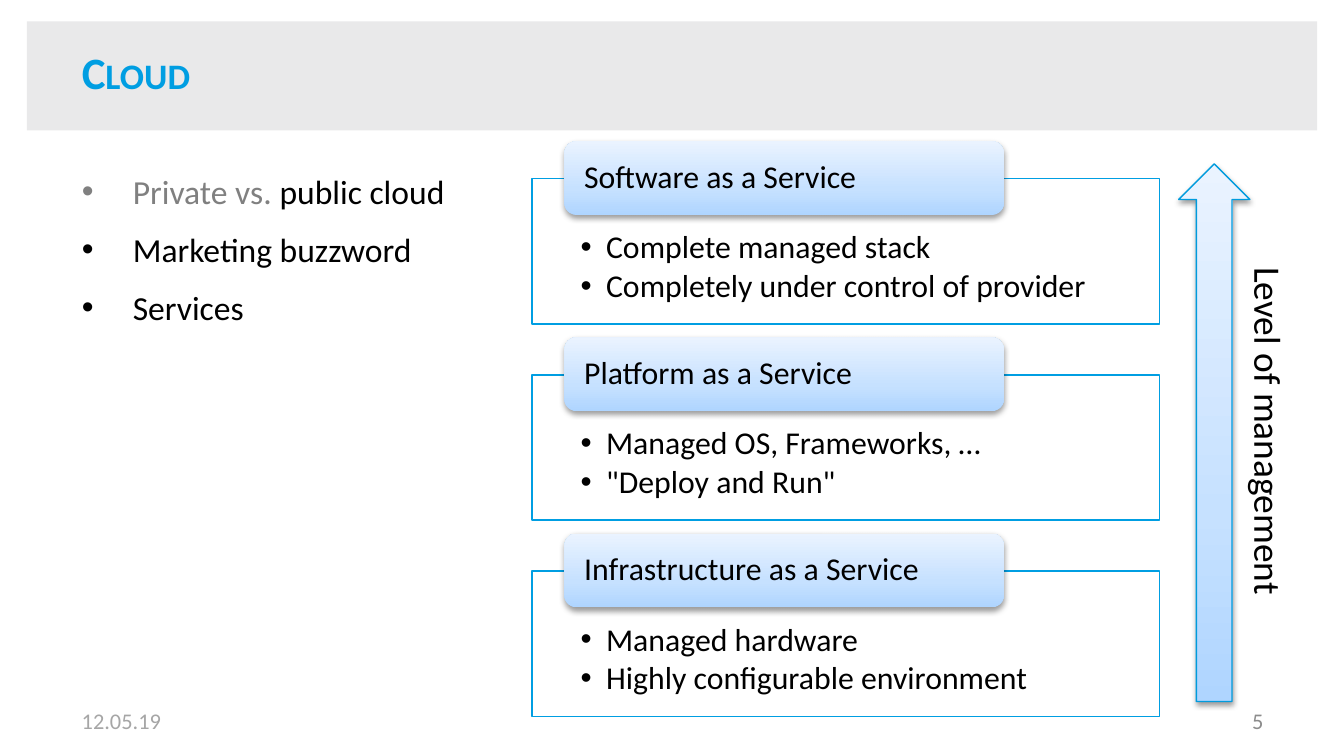
from dataclasses import dataclass

from pptx import Presentation
from pptx.dml.color import RGBColor
from pptx.enum.shapes import MSO_SHAPE as Preset
from pptx.enum.text import MSO_ANCHOR as Anchor, MSO_AUTO_SIZE as AutoSize, PP_ALIGN as Align
from pptx.oxml.ns import qn
from pptx.oxml.xmlchemy import OxmlElement as new_element
from pptx.util import Inches, Pt


@dataclass(frozen=True)
class Theme:
    font: str = "Calibri"
    accent: str = "009EE2"
    arrow_line: str = "009BDD"
    band: str = "E9E9EA"
    panel: str = "FFFFFF"
    text: str = "000000"
    muted: str = "808080"
    date: str = "A6A6A6"
    number: str = "8C8C8C"
    gradient: tuple = ((0, "AFD5FF"), (35, "C6E1FF"), (100, "EAF3FF"))
    title_size: int = 24
    body_size: int = 18
    service_size: int = 17
    arrow_size: int = 20
    footer_size: int = 12


def add_element(parent, tag, **attributes):
    child = new_element(tag)
    for name, value in attributes.items():
        child.set(name, str(value))
    parent.append(child)
    return child


def apply(target, values):
    for name, value in values.items():
        setattr(target, name, value)


class SlideBuilder:
    def __init__(self, slide, theme):
        self.slide = slide
        self.theme = theme

    def box(self, bounds):
        return self.slide.shapes.add_textbox(*map(Inches, bounds))

    def shape(self, preset, bounds, fill=None, line=None):
        """Add a preset shape; without a fill colour it gets the theme gradient and a shadow."""
        shape = self.slide.shapes.add_shape(preset, *map(Inches, bounds))
        shape.shadow.inherit = False
        if fill:
            shape.fill.solid()
            shape.fill.fore_color.rgb = RGBColor.from_string(fill)
        else:
            self.gradient(shape)
            self.shadow(shape)
        if line:
            shape.line.color.rgb = RGBColor.from_string(line)
            shape.line.width = Pt(0.75)
        else:
            shape.line.fill.background()
        return shape

    def gradient(self, shape):
        shape.fill.gradient()
        shape.fill.gradient_angle = 90
        stops = shape._element.spPr.find(qn("a:gradFill")).find(qn("a:gsLst"))
        for stop in list(stops):
            stops.remove(stop)
        for position, color in self.theme.gradient:
            stop = add_element(stops, "a:gs", pos=position * 1000)
            add_element(stop, "a:srgbClr", val=color)

    def shadow(self, shape):
        effects = shape._element.spPr.find(qn("a:effectLst"))
        outer = add_element(effects, "a:outerShdw", blurRad=Pt(3.1), dist=Pt(1.6),
                            dir=90 * 60000, rotWithShape=0)
        color = add_element(outer, "a:srgbClr", val=self.theme.text)
        add_element(color, "a:alpha", val=38000)

    def text(self, shape, lines, size, color=None, insets=(0.1, 0.05, 0.1, 0.05),
             anchor=Anchor.TOP, wrap=True, bullet_indent=None, before=0, bold=False, **spacing):
        """Fill a shape with lines, each a string or a list of (text, colour) runs."""
        frame = shape.text_frame
        sides = ("margin_left", "margin_top", "margin_right", "margin_bottom")
        apply(frame, {"word_wrap": wrap, "vertical_anchor": anchor,
                      **dict(zip(sides, map(Inches, insets)))})
        for index, line in enumerate(lines):
            paragraph = frame.paragraphs[0] if index == 0 else frame.add_paragraph()
            if bullet_indent:
                self.bullet(paragraph, bullet_indent)
            apply(paragraph, {"alignment": Align.LEFT, **spacing})
            if index and before:
                paragraph.space_before = Pt(before)
            runs = [(line, color or self.theme.text)] if isinstance(line, str) else line
            for words, run_color in runs:
                run = paragraph.add_run()
                run.text = words
                apply(run.font, {"name": self.theme.font, "size": Pt(size), "bold": bold})
                run.font.color.rgb = RGBColor.from_string(run_color)
        return frame

    def bullet(self, paragraph, indent):
        properties = paragraph._p.get_or_add_pPr()
        properties.set("marL", str(Inches(indent)))
        properties.set("indent", str(-Inches(indent)))
        add_element(properties, "a:buFont", typeface="Arial")
        add_element(properties, "a:buChar", char="•")

    def title(self, words):
        theme = self.theme
        self.shape(Preset.RECTANGLE, (0.2, 0.16, 9.6, 0.81), theme.band)
        frame = self.text(self.box((0.51, 0.21, 6.85, 0.65)), [words], theme.title_size,
                          theme.accent, anchor=Anchor.MIDDLE, bold=True)
        frame.paragraphs[0].runs[0].font._element.set("cap", "small")

    def service(self, top, name, features):
        """Add an outlined panel of features with a name tab over its upper edge."""
        theme = self.theme
        panel = self.shape(Preset.RECTANGLE, (3.96, top, 4.67, 1.08), theme.panel, theme.accent)
        fill_color = panel._element.spPr.find(qn("a:solidFill"))[0]
        add_element(fill_color, "a:alpha", val=90000)
        self.text(panel, features, theme.service_size, insets=(0.36, 0.39, 0.36, 0.13),
                  bullet_indent=0.19, line_spacing=0.9, space_after=Pt(2.5))
        tab = self.shape(Preset.ROUNDED_RECTANGLE, (4.2, top - 0.28, 3.27, 0.55))
        self.text(tab, [name], theme.service_size, insets=(0.12, 0, 0.12, 0),
                  anchor=Anchor.MIDDLE, line_spacing=0.9)

    def level_arrow(self, words):
        self.shape(Preset.UP_ARROW, (8.77, 1.22, 0.53, 4), line=self.theme.arrow_line)
        label = self.box((8.11, 3, 2.66, 0.44))
        label.rotation = 90
        frame = self.text(label, [words], self.theme.arrow_size, wrap=False)
        frame.auto_size = AutoSize.SHAPE_TO_FIT_TEXT

    def footer(self, bounds, words, color, alignment):
        self.text(self.box(bounds), [words], self.theme.footer_size, color,
                  anchor=Anchor.MIDDLE, alignment=alignment)


def main():
    presentation = Presentation()
    width = Inches(10)
    apply(presentation, {"slide_width": width, "slide_height": width * 9 // 16})
    theme = Theme()
    builder = SlideBuilder(presentation.slides.add_slide(presentation.slide_layouts[6]), theme)

    builder.title("Cloud")
    points = [[("Private vs. ", theme.muted), ("public cloud", theme.text)],
              "Marketing buzzword", "Services"]
    builder.text(builder.box((0.51, 1.22, 8.98, 3.66)), points, theme.body_size,
                 bullet_indent=0.38, before=3.6, space_after=Pt(6))
    builder.footer((7.17, 5.21, 2.33, 0.3), "5", theme.number, Align.RIGHT)
    builder.footer((0.51, 5.21, 2.2, 0.3), "12.05.19", theme.date, Align.LEFT)

    services = {
        "Software as a Service": ["Complete managed stack",
                                  "Completely under control of provider"],
        "Platform as a Service": ["Managed OS, Frameworks, …", '"Deploy and Run"'],
        "Infrastructure as a Service": ["Managed hardware", "Highly configurable environment"],
    }
    first_top, pitch = 1.33, 1.46
    for index, (name, features) in enumerate(services.items()):
        builder.service(first_top + index * pitch, name, features)
    builder.level_arrow("Level of management")

    presentation.save("out.pptx")


if __name__ == "__main__":
    main()
